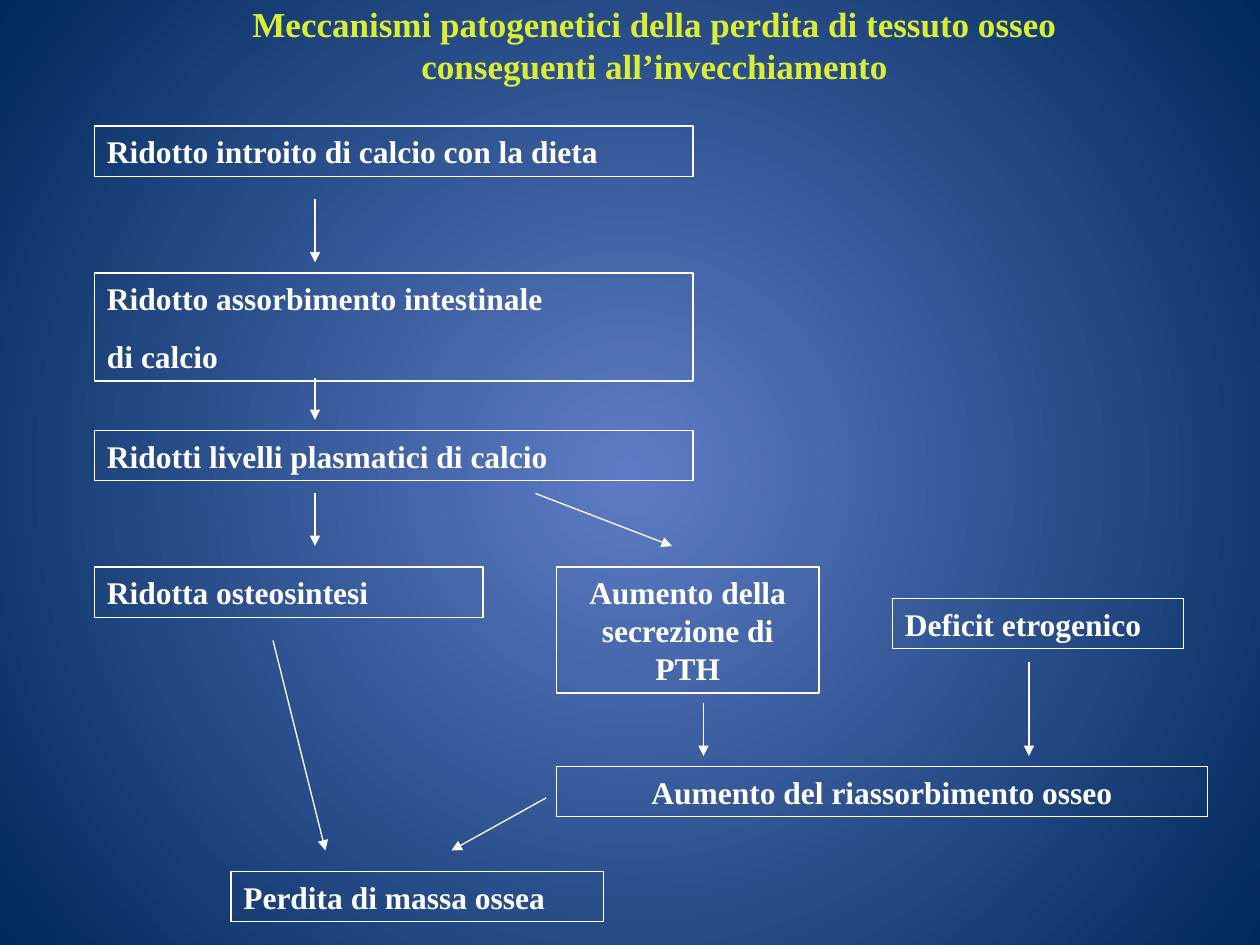
from lxml.etree import SubElement
from pptx import Presentation
from pptx.dml.color import RGBColor
from pptx.enum.shapes import MSO_CONNECTOR, MSO_SHAPE
from pptx.enum.text import MSO_ANCHOR, MSO_AUTO_SIZE, PP_ALIGN
from pptx.oxml.ns import qn
from pptx.util import Inches, Pt

COLS, ROWS = 120, 90
LEFT, MID = PP_ALIGN.LEFT, PP_ALIGN.CENTER


def rgb(code):
    return RGBColor.from_string(code)


class Chart:
    """Style and slide of the flow chart; lengths are grid columns and rows."""
    font = "Times New Roman"
    ink, gold = "FFFFFF", "DCEE34"
    core, edge = "5E7CC5", "00295C"

    def __init__(self, deck):
        self.slide = deck.slides.add_slide(deck.slide_layouts[5])
        self.col = deck.slide_width / COLS
        self.row = deck.slide_height / ROWS

    def place(self, x, y):
        return round(x * self.col), round(y * self.row)

    def glow(self):
        """Radial background, light in the centre."""
        fill = self.slide.background.fill
        fill.gradient()
        for stop, code in zip(fill.gradient_stops, (self.core, self.edge)):
            stop.color.rgb = rgb(code)
        lin = next(self.slide.element.iter(qn("a:lin")))
        grad = lin.getparent()
        grad.remove(lin)
        ring = SubElement(grad, qn("a:path"), {"path": "circle"})
        SubElement(ring, qn("a:fillToRect"), dict.fromkeys("ltrb", "50000"))

    def label(self, shape, text, size, code, align):
        frame = shape.text_frame
        frame.text = text
        frame.word_wrap = True
        frame.auto_size = MSO_AUTO_SIZE.NONE
        frame.vertical_anchor = MSO_ANCHOR.TOP
        for i, para in enumerate(frame.paragraphs):
            para.alignment = align
            para.space_before = Pt(11.2 if i and align == LEFT else 0)
            for run in para.runs:
                font = run.font
                font.name, font.size, font.bold = self.font, Pt(size), True
                font.color.rgb = rgb(code)

    def title(self, text, x, y, w, h):
        shape = self.slide.shapes.title
        shape.left, shape.top = self.place(x, y)
        shape.width, shape.height = self.place(w, h)
        self.label(shape, text, 20, self.gold, MID)

    def stroke(self, line):
        line.color.rgb = rgb(self.ink)
        line.width = Pt(0.75)

    def box(self, text, x, y, w, h=4.8, align=LEFT):
        shape = self.slide.shapes.add_shape(
            MSO_SHAPE.RECTANGLE, *self.place(x, y), *self.place(w, h))
        shape.shadow.inherit = False
        shape.fill.background()
        self.stroke(shape.line)
        self.label(shape, text, 18, self.ink, align)

    def arrow(self, x1, y1, x2, y2):
        link = self.slide.shapes.add_connector(
            MSO_CONNECTOR.STRAIGHT, *self.place(x1, y1), *self.place(x2, y2))
        self.stroke(link.line)
        props = link.element.spPr
        SubElement(props.find(qn("a:ln")), qn("a:tailEnd"), type="triangle")
        SubElement(props, qn("a:effectLst"))


def main():
    deck = Presentation()
    deck.slide_width, deck.slide_height = Inches(10), Inches(7.5)
    chart = Chart(deck)
    chart.glow()
    chart.title("Meccanismi patogenetici della perdita di tessuto osseo\n"
                "conseguenti all’invecchiamento", -2.4, -0.36, 129.5, 9.36)

    chart.box("Ridotto introito di calcio con la dieta", 9, 12, 57)
    chart.box("Ridotto assorbimento intestinale\ndi calcio", 9, 26, 57, 10.3)
    chart.box("Ridotti livelli plasmatici di calcio", 9, 41, 57)
    chart.box("Ridotta osteosintesi", 9, 54, 37)
    chart.box("Aumento della secrezione di PTH", 53, 54, 25, 12, MID)
    chart.box("Deficit etrogenico", 85, 57, 27.7)
    chart.box("Aumento del riassorbimento osseo", 53, 73, 62, align=MID)
    chart.box("Perdita di massa ossea", 22, 83, 35.5)

    for x, top, end in ((30, 19, 25), (30, 36, 40), (30, 47, 52),
                        (67, 67, 72), (98, 63, 72)):
        chart.arrow(x, top, x, end)
    chart.arrow(51, 47, 64, 52)
    chart.arrow(26, 61, 31, 81)
    chart.arrow(52, 76, 43, 81)
    deck.save("out.pptx")


if __name__ == "__main__":
    main()
